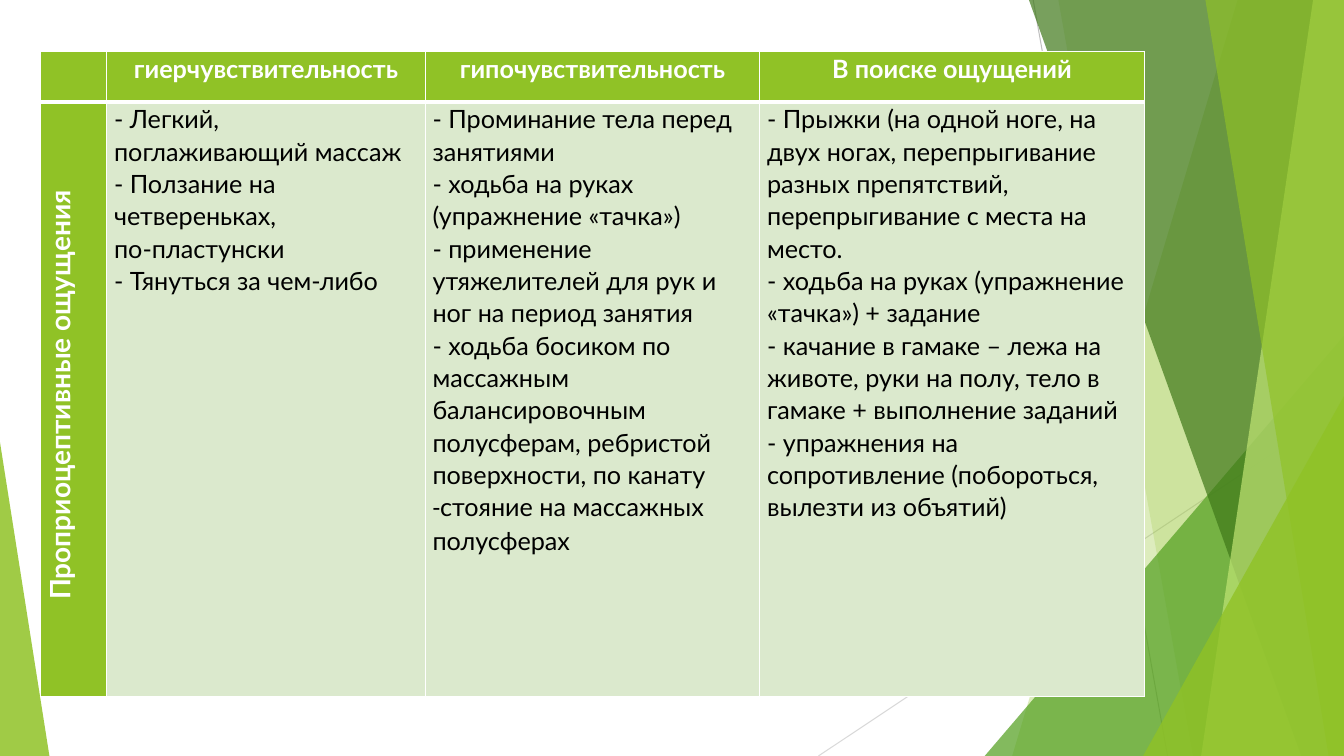
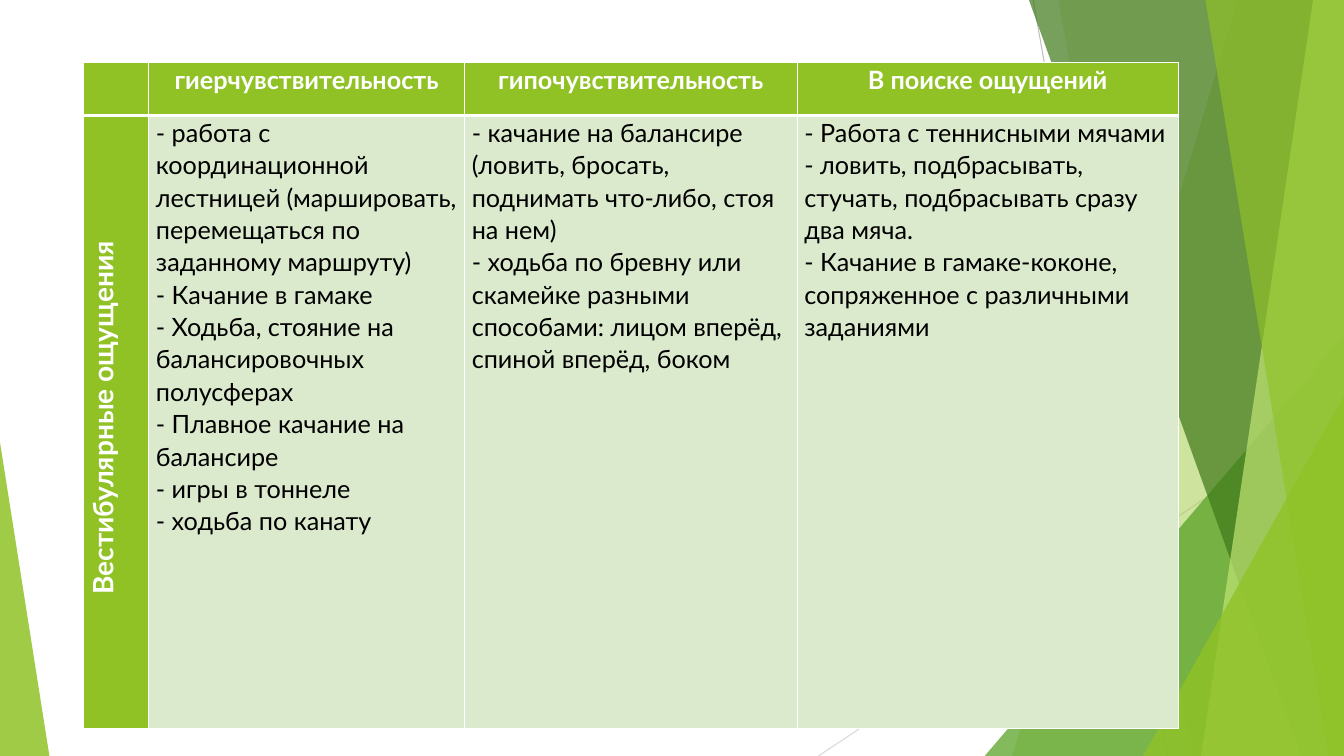
from dataclasses import dataclass

from lxml.etree import SubElement
from pptx import Presentation
from pptx.dml.color import RGBColor
from pptx.enum.shapes import MSO_CONNECTOR, MSO_SHAPE
from pptx.enum.text import MSO_ANCHOR, PP_ALIGN
from pptx.oxml.ns import qn
from pptx.util import Pt


@dataclass(frozen=True)
class Theme:
    green: str = "90C226"
    mid_green: str = "54A021"
    dark_green: str = "3F7819"
    lime: str = "C0E474"
    pale_green: str = "DBE9CD"
    gray: str = "BFBFBF"
    light_gray: str = "D9D9D9"
    white: str = "FFFFFF"
    black: str = "000000"
    font: str = "Lato"
    dash_font: str = "Calibri"
    text_size: float = 18
    label_size: float = 20
    line_spacing: float = 1.07
    cell_margin: float = 5.2
    thin: float = 1
    thick: float = 3


T = Theme()
WIDTH, HEIGHT = 960, 540


@dataclass(frozen=True)
class Ray:
    x1: float
    y1: float
    x2: float
    y2: float
    color: str


@dataclass(frozen=True)
class Wedge:
    """Full-height area from a slanted left edge to the right slide edge."""
    top_x: float
    bottom_x: float
    color: str
    opacity: int


@dataclass(frozen=True)
class Corner:
    """Right triangle standing on the bottom edge; apex 0 is left, 1 right."""
    left: float
    top: float
    width: float
    apex: int
    color: str
    opacity: int


@dataclass(frozen=True)
class Sheet:
    left: float
    top: float
    cols: tuple[float, ...]
    rows: tuple[float, ...]
    label: str
    columns: tuple[tuple[str, ...], ...]


RAYS = (
    Ray(738, 0, 834, HEIGHT, T.gray),
    Ray(WIDTH, 290, 584.6, HEIGHT, T.light_gray),
)
FACETS = (
    Wedge(884, 723, T.green, 30),
    Wedge(756, 852, T.green, 20),
    Corner(703.4, 239.8, 256.6, 1, T.mid_green, 72),
    Wedge(735, 929.5, T.dark_green, 70),
    Wedge(938, 858, T.lime, 70),
    Wedge(861, 949, T.green, 65),
    Corner(816.5, 283, 143.5, 1, T.green, 80),
    Corner(0, 316, 35.3, 0, T.green, 85),
)

HEADERS = ("гиерчувствительность", "гипочувствительность", "В поиске ощущений")
SHEETS = (
    Sheet(
        28.8, 36.7, (47.5, 227.5, 239, 274.5), (36, 425),
        "Проприоцептивные ощущения",
        (
            (
                "- Легкий, поглаживающий массаж",
                "- Ползание на четвереньках,",
                "по-пластунски",
                "- Тянуться за чем-либо",
            ),
            (
                "- Проминание тела перед занятиями",
                "- ходьба на руках (упражнение «тачка»)",
                "- применение утяжелителей для рук и ног на период занятия",
                "- ходьба босиком по массажным балансировочным полусферам, "
                "ребристой поверхности, по канату",
                "-стояние на массажных полусферах",
            ),
            (
                "- Прыжки (на одной ноге, на двух ногах, перепрыгивание разных "
                "препятствий, перепрыгивание с места на место.",
                "- ходьба на руках (упражнение «тачка») + задание",
                "- качание в гамаке – лежа на животе, руки на полу, тело в "
                "гамаке + выполнение заданий",
                "- упражнения на сопротивление (побороться, вылезти из объятий)",
            ),
        ),
    ),
    Sheet(
        59.4, 44.6, (46.8, 225.6, 237.6, 272.2), (38, 438),
        "Вестибулярные ощущения",
        (
            (
                "- работа с координационной лестницей (маршировать, "
                "перемещаться по заданному маршруту)",
                "- Качание в гамаке",
                "- Ходьба, стояние на балансировочных полусферах",
                "- Плавное качание на балансире",
                "- игры в тоннеле",
                "- ходьба по канату",
            ),
            (
                "- качание на балансире (ловить, бросать, поднимать что-либо, "
                "стоя на нем)",
                "- ходьба по бревну или скамейке разными способами: лицом "
                "вперёд, спиной вперёд, боком",
            ),
            (
                "- Работа с теннисными мячами - ловить, подбрасывать, стучать, "
                "подбрасывать сразу два мяча.",
                "- Качание в гамаке-коконе, сопряженное с различными заданиями",
            ),
        ),
    ),
)


# Background
def draw_ray(s, ray: Ray) -> None:
    line = s.shapes.add_connector(
        MSO_CONNECTOR.STRAIGHT, Pt(ray.x1), Pt(ray.y1), Pt(ray.x2), Pt(ray.y2))
    line.line.color.rgb = RGBColor.from_string(ray.color)
    line.line.width = Pt(0.75)
    SubElement(line._element.spPr, qn("a:effectLst"))


def draw_facet(s, facet: Wedge | Corner) -> None:
    if isinstance(facet, Wedge):
        outline = s.shapes.build_freeform(Pt(facet.top_x), 0)
        outline.add_line_segments(
            [(Pt(WIDTH), 0), (Pt(WIDTH), Pt(HEIGHT)), (Pt(facet.bottom_x), Pt(HEIGHT))])
        sp = outline.convert_to_shape()
    else:
        sp = s.shapes.add_shape(
            MSO_SHAPE.ISOSCELES_TRIANGLE, Pt(facet.left), Pt(facet.top),
            Pt(facet.width), Pt(HEIGHT - facet.top))
        sp.adjustments[0] = facet.apex
    sp.shadow.inherit = False
    sp.line.fill.background()
    sp.fill.solid()
    sp.fill.fore_color.rgb = RGBColor.from_string(facet.color)
    color = sp._element.spPr.find(qn("a:solidFill"))[0]
    SubElement(color, qn("a:alpha"), val=str(facet.opacity * 1000))


# Table cells
def style_cell(cell, fill: str, top: float, bottom: float) -> None:
    tc_pr = cell._tc.get_or_add_tcPr()
    for side, width in (("L", T.thin), ("R", T.thin), ("T", top), ("B", bottom)):
        ln = SubElement(tc_pr, qn(f"a:ln{side}"), w=str(Pt(width)))
        SubElement(SubElement(ln, qn("a:solidFill")), qn("a:srgbClr"), val=T.white)
    cell.fill.solid()
    cell.fill.fore_color.rgb = RGBColor.from_string(fill)
    cell.margin_left = cell.margin_right = Pt(T.cell_margin)
    cell.margin_top = cell.margin_bottom = 0


def write_cell(cell, lines: tuple[str, ...], color: str, size: float = T.text_size,
               heading: bool = False) -> None:
    tf = cell.text_frame
    for i, line in enumerate(lines):
        p = tf.add_paragraph() if i else tf.paragraphs[0]
        p.line_spacing = T.line_spacing
        p.alignment = PP_ALIGN.CENTER if heading else PP_ALIGN.LEFT
        p.font.name = T.font
        p.font.size = Pt(size)
        p.font.bold = heading
        p.font.color.rgb = RGBColor.from_string(color)
        if line.startswith("-") and not line.startswith("- "):
            r = p.add_run()
            r.text, line = line[0], line[1:]
            r.font.name = T.dash_font
        p.add_run().text = line


def draw_table(s, sheet: Sheet) -> None:
    table = s.shapes.add_table(
        len(sheet.rows), len(sheet.cols), Pt(sheet.left), Pt(sheet.top),
        Pt(sum(sheet.cols)), Pt(sum(sheet.rows))).table
    table.first_row = table.horz_banding = False
    for column, width in zip(table.columns, sheet.cols):
        column.width = Pt(width)
    for row, height in zip(table.rows, sheet.rows):
        row.height = Pt(height)

    # Header row and body row
    for i in range(len(sheet.cols)):
        style_cell(table.cell(0, i), T.green, T.thin, T.thick)
        style_cell(table.cell(1, i), T.pale_green if i else T.green, T.thick, T.thin)
    for i, (header, lines) in enumerate(zip(HEADERS, sheet.columns), start=1):
        write_cell(table.cell(0, i), (header,), T.white, heading=True)
        write_cell(table.cell(1, i), lines, T.black)

    # Rotated row label
    label = table.cell(1, 0)
    write_cell(label, (sheet.label,), T.white, T.label_size, heading=True)
    label.vertical_anchor = MSO_ANCHOR.MIDDLE
    label._tc.get_or_add_tcPr().set("vert", "vert270")
    label.text_frame.paragraphs[0]._p.get_or_add_pPr().set("marL", str(Pt(6)))


def main() -> None:
    prs = Presentation()
    prs.slide_width, prs.slide_height = Pt(WIDTH), Pt(HEIGHT)
    for sheet in SHEETS:
        s = prs.slides.add_slide(prs.slide_layouts[6])
        for ray in RAYS:
            draw_ray(s, ray)
        for facet in FACETS:
            draw_facet(s, facet)
        draw_table(s, sheet)
    prs.save("out.pptx")


if __name__ == "__main__":
    main()
